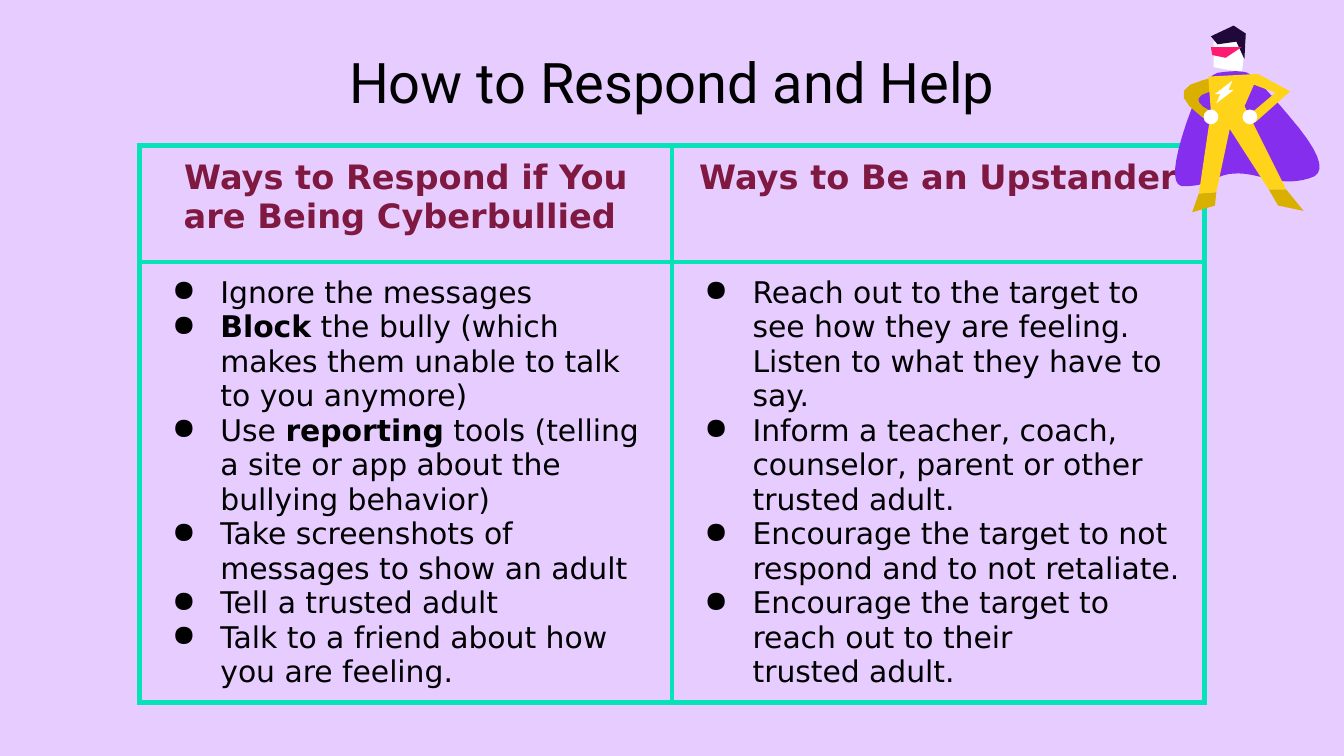
from dataclasses import dataclass

import pptx
import pptx.dml.color
import pptx.enum.shapes
import pptx.enum.text
import pptx.oxml
import pptx.oxml.ns
import pptx.util

# The slide is a grid of 1000 columns; rows are as high as columns are wide.
SLIDE_WIDTH = pptx.util.Inches(10)
SLIDE_HEIGHT = SLIDE_WIDTH * 9 // 16
SIDES = ("left", "right", "top", "bottom")


@dataclass(frozen=True)
class Theme:
    background: str = "E7CDFF"
    ink: str = "000000"
    heading: str = "801941"
    border: str = "07E2B8"
    hair: str = "20093A"
    skin: str = "FFFFFF"
    mask: str = "FF1A72"
    cape: str = "862EED"
    suit: str = "FFD31A"
    suit_shade: str = "D9AF00"
    title_font: str = "Roboto"
    table_font: str = "DejaVu Sans"
    title_size: int = 30
    heading_size: int = 18
    body_size: int = 16
    border_width: int = 3


@dataclass(frozen=True)
class Column:
    heading: str
    advice: tuple[str, ...]  # bold words stand between asterisks


@dataclass(frozen=True)
class Outline:
    color: str
    corners: tuple[tuple[int, int], ...]
    smoothing: int = 0


THEME = Theme()

COLUMNS = (
    Column("Ways to Respond if You are Being Cyberbullied ", (
        "Ignore the messages",
        "*Block* the bully (which makes them unable to talk to you anymore)",
        "Use *reporting* tools (telling a site or app about the bullying behavior)",
        "Take screenshots of messages to show an adult",
        "Tell a trusted adult",
        "Talk to a friend about how you are feeling.")),
    Column("Ways to Be an Upstander", (
        "Reach out to the target to see how they are feeling. "
        "Listen to what they have to say.",
        "Inform a teacher, coach, counselor, parent or other trusted adult.",
        "Encourage the target to not respond and to not retaliate.",
        "Encourage the target to reach out to their \ntrusted adult.")),
)

CAPE = Outline(THEME.cape, (
    (921, 52), (894, 56), (868, 138), (893, 139), (918, 126), (960, 138),
    (992, 126), (934, 56)), smoothing=3)
SHADED_ARM = Outline(THEME.suit_shade, (
    (908, 55), (872, 68), (907, 98), (911, 89), (886, 74), (908, 65)), smoothing=2)
BOOTS = (
    Outline(THEME.suit_shade, ((944, 141), (951, 153), (970, 157), (957, 141))),
    Outline(THEME.suit_shade, ((892, 144), (887, 158), (904, 153), (905, 143))),
)
SUIT = Outline(THEME.suit, (
    (899, 57), (901, 83), (892, 144), (905, 143), (915, 96), (944, 141),
    (957, 141), (926, 79), (933, 63), (949, 69), (930, 85), (934, 91),
    (960, 68), (936, 55)))
BOLT = Outline(THEME.skin, (
    (917, 60), (904, 70), (908, 70), (905, 77), (918, 67), (914, 67)))
FACE = Outline(THEME.skin, ((903, 31), (903, 50), (924, 54), (927, 31)))
HAIR = Outline(THEME.hair, (
    (918, 19), (901, 27), (906, 33), (920, 31), (926, 44), (927, 25)))
MASK = Outline(THEME.mask, ((901, 35), (902, 41), (912, 43), (924, 35)))
HERO = (FACE, HAIR, CAPE, SHADED_ARM, *BOOTS, SUIT, MASK, BOLT)
HAND_CENTERS = ((901, 87), (930, 87))
HAND_SIZE = 11


def grid(cells: float) -> int:
    return round(SLIDE_WIDTH * cells / 1000)


def rgb(color: str) -> pptx.dml.color.RGBColor:
    return pptx.dml.color.RGBColor.from_string(color)


def write(paragraph, text: str, font: str, size: int, color: str,
          bold: bool = False) -> None:
    """Add runs; asterisks switch bold and a newline breaks the line."""
    for part, words in enumerate(text.split("*")):
        for row, line in enumerate(words.split("\n")):
            if row:
                paragraph.add_line_break()
            if not line:
                continue
            run = paragraph.add_run()
            run.text = line
            look = {"name": font, "size": pptx.util.Pt(size),
                    "bold": bold or part % 2 == 1}
            for key, value in look.items():
                setattr(run.font, key, value)
            run.font.color.rgb = rgb(color)


def add_element(parent, tag: str, content: str = "", attributes: str = "") -> None:
    namespace = pptx.oxml.ns.nsdecls("a")
    parent.append(pptx.oxml.parse_xml(
        f"<a:{tag} {namespace} {attributes}>{content}</a:{tag}>"))


def add_bullet(paragraph) -> None:
    properties = paragraph._p.get_or_add_pPr()
    properties.set("marL", str(grid(50)))
    properties.set("indent", str(-grid(36)))
    add_element(properties, "buClr", f'<a:srgbClr val="{THEME.ink}"/>')
    add_element(properties, "buChar", attributes='char="●"')


def set_margins(box) -> None:
    for side in SIDES:
        setattr(box, f"margin_{side}", grid(10))


def format_cell(cell) -> None:
    set_margins(cell)
    line = f'<a:solidFill><a:srgbClr val="{THEME.border}"/></a:solidFill>'
    width = pptx.util.Pt(THEME.border_width)
    for side in SIDES:
        add_element(cell._tc.get_or_add_tcPr(), f"ln{side[0].upper()}", line,
                    f'w="{width}"')
    cell.fill.background()


def add_title(slide, text: str) -> None:
    title = slide.shapes.title
    place = {"left": 189, "top": 22, "width": 622, "height": 77}
    for key, cells in place.items():
        setattr(title, key, grid(cells))
    frame = title.text_frame
    set_margins(frame)
    frame.vertical_anchor = pptx.enum.text.MSO_ANCHOR.MIDDLE
    frame.auto_size = pptx.enum.text.MSO_AUTO_SIZE.NONE
    frame.paragraphs[0].alignment = pptx.enum.text.PP_ALIGN.CENTER
    write(frame.paragraphs[0], text, THEME.title_font, THEME.title_size, THEME.ink)


def add_advice_table(slide, columns: tuple[Column, ...]) -> None:
    heights, width = (87, 293), 396
    table = slide.shapes.add_table(
        len(heights), len(columns), grid(104), grid(108),
        grid(width * len(columns)), grid(sum(heights))).table
    table.first_row = table.horz_banding = False
    for row, height in zip(table.rows, heights):
        row.height = grid(height)
    for index, column in enumerate(columns):
        table.columns[index].width = grid(width)
        heading, body = table.cell(0, index), table.cell(1, index)
        format_cell(heading)
        format_cell(body)
        caption = heading.text_frame.paragraphs[0]
        caption.alignment = pptx.enum.text.PP_ALIGN.CENTER
        write(caption, column.heading, THEME.table_font, THEME.heading_size,
              THEME.heading, bold=True)
        frame = body.text_frame
        for number, advice in enumerate(column.advice):
            item = frame.add_paragraph() if number else frame.paragraphs[0]
            add_bullet(item)
            write(item, advice, THEME.table_font, THEME.body_size, THEME.ink)


def smooth(corners, rounds: int):
    """Cut every corner at a quarter of its sides, once per round."""
    for _ in range(rounds):
        following = corners[1:] + corners[:1]
        corners = tuple(
            (x + (next_x - x) * share, y + (next_y - y) * share)
            for (x, y), (next_x, next_y) in zip(corners, following)
            for share in (1 / 4, 3 / 4))
    return corners


def paint(shape, color: str) -> None:
    shape.shadow.inherit = False
    shape.fill.solid()
    shape.fill.fore_color.rgb = rgb(color)
    shape.line.fill.background()


def add_hero(slide) -> None:
    hero = slide.shapes.add_group_shape()
    for outline in HERO:
        start, *others = [(grid(x), grid(y))
                          for x, y in smooth(outline.corners, outline.smoothing)]
        builder = hero.shapes.build_freeform(*start)
        builder.add_line_segments(others, close=True)
        paint(builder.convert_to_shape(), outline.color)
    for x, y in HAND_CENTERS:
        hand = hero.shapes.add_shape(
            pptx.enum.shapes.MSO_SHAPE.OVAL, grid(x - HAND_SIZE / 2),
            grid(y - HAND_SIZE / 2), grid(HAND_SIZE), grid(HAND_SIZE))
        paint(hand, THEME.skin)


def main() -> None:
    deck = pptx.Presentation()
    deck.slide_width, deck.slide_height = SLIDE_WIDTH, SLIDE_HEIGHT
    slide = deck.slides.add_slide(deck.slide_layouts[5])
    slide.background.fill.solid()
    slide.background.fill.fore_color.rgb = rgb(THEME.background)
    add_title(slide, "How to Respond and Help")
    add_advice_table(slide, COLUMNS)
    add_hero(slide)
    deck.save("out.pptx")


if __name__ == "__main__":
    main()
